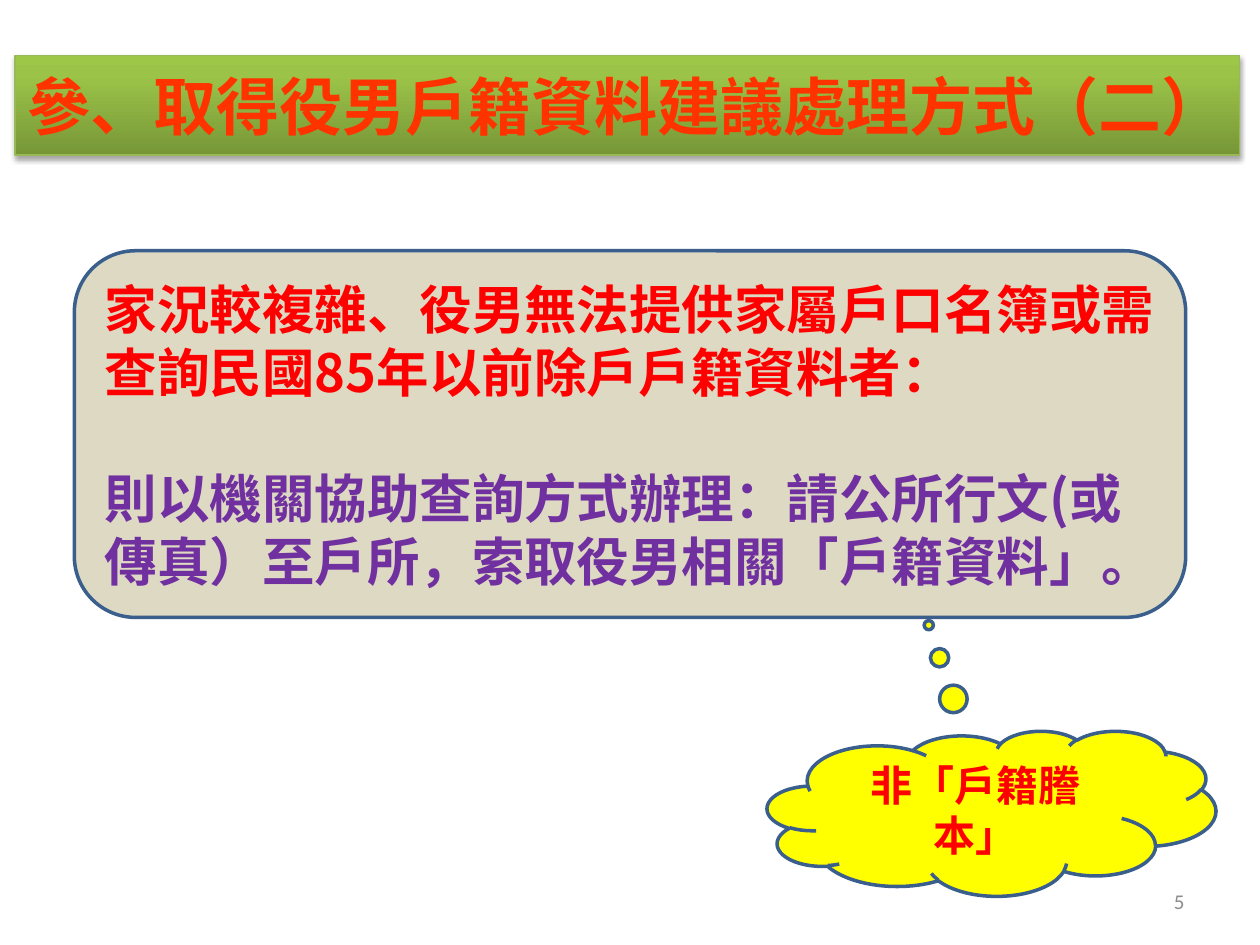
from copy import deepcopy

from lxml.etree import SubElement
from pptx import Presentation
from pptx.dml.color import RGBColor
from pptx.enum.shapes import MSO_SHAPE as Shape
from pptx.enum.text import MSO_ANCHOR as Anchor, PP_ALIGN as Align
from pptx.oxml.ns import qn
from pptx.util import Inches, Pt

CJK_FONT = "Noto Sans CJK SC"
TITLE_RED = RGBColor(0xFF, 0x33, 0x00)
RED = RGBColor(0xFF, 0x00, 0x00)
PURPLE = RGBColor(0x70, 0x30, 0xA0)
YELLOW = RGBColor(0xFF, 0xFF, 0x00)
BEIGE = RGBColor(0xDD, 0xD9, 0xC3)
OUTLINE_BLUE = RGBColor(0x3A, 0x5F, 0x8C)
GREEN_LINE = RGBColor(0x98, 0xB9, 0x55)
GREEN_STOPS = [
    (0, RGBColor(0x77, 0x97, 0x37)),
    (0.8, RGBColor(0x9B, 0xC3, 0x48)),
    (1, RGBColor(0x9D, 0xC7, 0x46)),
]
GRAY = RGBColor(0x8C, 0x8C, 0x8C)


def add_box(slide, kind, left, top, width, height, line_color, line_width, fill=None):
    shape = slide.shapes.add_shape(
        kind, Inches(left), Inches(top), Inches(width), Inches(height))
    shape.shadow.inherit = False
    if fill is not None:
        shape.fill.solid()
        shape.fill.fore_color.rgb = fill
    shape.line.color.rgb = line_color
    shape.line.width = Pt(line_width)
    return shape


def write_paragraphs(shape, lines, size, align=Align.LEFT, font=CJK_FONT,
                     bold=True, gap=0):
    """Write (text, color) lines, with a gap in points between them."""
    frame = shape.text_frame
    frame.word_wrap = True
    frame.vertical_anchor = Anchor.MIDDLE
    for index, (text, color) in enumerate(lines):
        paragraph = frame.add_paragraph() if index else frame.paragraphs[0]
        paragraph.alignment = align
        if index:
            paragraph.space_before = Pt(gap)
        run = paragraph.add_run()
        run.text = text
        paragraph.font.size = Pt(size)
        paragraph.font.bold = bold
        paragraph.font.name = font
        paragraph.font.color.rgb = color
        SubElement(run.font._element, qn("a:ea"), typeface=font)


def apply_green_gradient(shape):
    shape.fill.gradient()
    shape.fill.gradient_angle = 90
    stop_list = shape._element.spPr.find(qn("a:gradFill")).find(qn("a:gsLst"))
    stop_list.append(deepcopy(stop_list[-1]))
    for stop, (position, color) in zip(shape.fill.gradient_stops, GREEN_STOPS):
        stop.position = position
        stop.color.rgb = color


def add_drop_shadow(shape):
    effects = shape._element.spPr.find(qn("a:effectLst"))
    shadow = SubElement(effects, qn("a:outerShdw"), blurRad=str(Pt(3.1)),
                        dist=str(Pt(1.8)), dir="5400000", rotWithShape="0")
    color = SubElement(shadow, qn("a:srgbClr"), val="000000")
    SubElement(color, qn("a:alpha"), val="35000")


def add_title(slide, text):
    banner = add_box(slide, Shape.RECTANGLE, 0.12, 0.44, 9.72, 0.79, GREEN_LINE, 0.75)
    apply_green_gradient(banner)
    add_drop_shadow(banner)
    write_paragraphs(banner, [(text, TITLE_RED)], 36)


def add_guidance(slide, lines):
    panel = add_box(slide, Shape.ROUNDED_RECTANGLE, 0.59, 1.99, 8.82, 2.91,
                    OUTLINE_BLUE, 2, BEIGE)
    write_paragraphs(panel, lines, 30, gap=36)


def add_cloud(slide, text):
    cloud = add_box(slide, Shape.CLOUD_CALLOUT, 6.09, 5.8, 3.56, 1.31,
                    OUTLINE_BLUE, 2, YELLOW)
    cloud.adjustments[0] = -0.14
    cloud.adjustments[1] = -1.14
    write_paragraphs(cloud, [(text, RED)], 24, Align.CENTER)


def add_page_number(slide, number):
    box = slide.shapes.add_textbox(Inches(7.17), Inches(6.95), Inches(2.33), Inches(0.4))
    write_paragraphs(box, [(number, GRAY)], 12, Align.RIGHT, "Calibri", False)


def main():
    presentation = Presentation()
    presentation.slide_width = Inches(10)
    presentation.slide_height = Inches(7.5)
    slide = presentation.slides.add_slide(presentation.slide_layouts[6])
    add_title(slide, "參、取得役男戶籍資料建議處理方式（二）")
    add_guidance(slide, [
        ("家況較複雜、役男無法提供家屬戶口名簿或需查詢民國85年以前除戶戶籍資料者：", RED),
        ("則以機關協助查詢方式辦理：請公所行文(或傳真）至戶所，索取役男相關「戶籍資料」。", PURPLE),
    ])
    add_cloud(slide, "非「戶籍謄本」")
    add_page_number(slide, "5")
    presentation.save("out.pptx")


if __name__ == "__main__":
    main()
